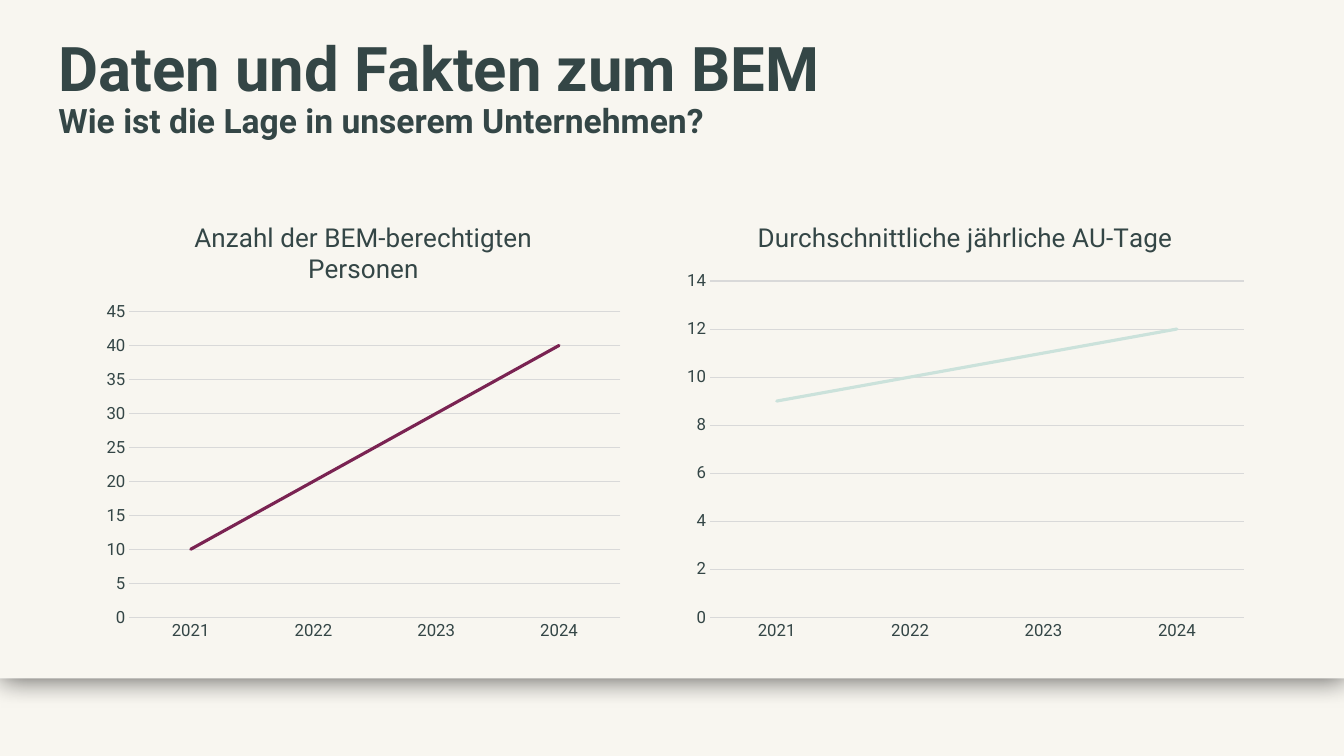
from lxml import etree
from pptx import Presentation
from pptx.chart.data import CategoryChartData
from pptx.dml.color import RGBColor
from pptx.enum import chart as ch, shapes, text
from pptx.oxml.ns import qn
from pptx.util import Inches, Pt

# Content
HEADING = "Daten und Fakten zum BEM"
QUESTION = "Wie ist die Lage in unserem Unternehmen?"
YEARS = ["2021", "2022", "2023", "2024"]
TRENDS = [
    dict(title="Durchschnittliche jährliche AU-Tage", values=[9, 10, 11, 12],
         color="mint", left=6.7, width=5.75),
    dict(title="Anzahl der BEM-berechtigten Personen", values=[10, 20, 30, 40],
         color="plum", left=0.95, width=5.31),
]
COLORS = {"paper": "F8F6F0", "ink": "344646", "grid": "D9D9D9",
          "mint": "CBE2DB", "plum": "7A2352", "shadow": "000000"}
FONT = "Roboto"
WIDTH, HEIGHT, PANEL_HEIGHT = 13.33, 7.5, 6.73
CHART_TOP, CHART_HEIGHT = 2, 4.45


def rgb(name):
    return RGBColor.from_string(COLORS[name])


def style(font, size, bold=False, color="ink"):
    font.name, font.size, font.bold = FONT, Pt(size), bold
    font.color.rgb = rgb(color)


def write(paragraph, words, **look):
    run = paragraph.add_run()
    run.text = words
    style(run.font, **look)


def stroke(line, color, width):
    line.color.rgb = rgb(color)
    line.width = Pt(width)


def add_panel(slide, top, height):
    panel = slide.shapes.add_shape(shapes.MSO_SHAPE.RECTANGLE, 0, Inches(top),
                                   Inches(WIDTH), Inches(height))
    panel.shadow.inherit = False
    panel.fill.solid()
    panel.fill.fore_color.rgb = rgb("paper")
    panel.line.fill.background()
    return panel


def add_shadow(panel, blur, distance, angle, opacity):
    effects = panel._element.spPr.find(qn("a:effectLst"))
    shadow = etree.SubElement(effects, qn("a:outerShdw"), blurRad=str(Pt(blur)),
                              dist=str(Pt(distance)), dir=str(angle * 60000),
                              algn="tl", rotWithShape="0")
    tint = etree.SubElement(shadow, qn("a:srgbClr"), val=COLORS["shadow"])
    etree.SubElement(tint, qn("a:alpha"), val=str(opacity * 1000))


def add_trend(slide, title, values, color, left, width):
    data = CategoryChartData()
    data.categories = YEARS
    data.add_series("Series 1", values)
    trend = slide.shapes.add_chart(
        ch.XL_CHART_TYPE.LINE, Inches(left), Inches(CHART_TOP),
        Inches(width), Inches(CHART_HEIGHT), data).chart
    style(trend.font, size=10)
    trend.has_legend = False
    trend.has_title = True
    write(trend.chart_title.text_frame.paragraphs[0], title, size=18.6)
    trend.chart_title.include_in_layout = False

    # Axes
    years, amounts = trend.category_axis, trend.value_axis
    for axis in (years, amounts):
        axis.major_tick_mark = axis.minor_tick_mark = ch.XL_TICK_MARK.NONE
        style(axis.tick_labels.font, size=12)
    stroke(years.format.line, "grid", 0.75)
    amounts.format.line.fill.background()
    amounts.has_major_gridlines = True
    stroke(amounts.major_gridlines.format.line, "grid", 0.75)

    # Line
    trend.plots[0].vary_by_categories = False
    series = trend.plots[0].series[0]
    series.smooth = False
    series.marker.style = ch.XL_MARKER_STYLE.NONE
    stroke(series.format.line, color, 2.25)
    series.format.line._get_or_add_ln().set("cap", "rnd")


deck = Presentation()
deck.slide_width, deck.slide_height = Inches(WIDTH), Inches(HEIGHT)
slide = deck.slides.add_slide(deck.slide_layouts[6])

# Background: footer strip below a raised panel
add_panel(slide, PANEL_HEIGHT, HEIGHT - PANEL_HEIGHT)
add_shadow(add_panel(slide, 0, PANEL_HEIGHT),
           blur=19.5, distance=2, angle=45, opacity=60)

# Heading
heading = slide.shapes.add_textbox(Inches(0.58), Inches(0.31),
                                   Inches(11), Inches(1.16)).text_frame
heading.word_wrap = True
heading.vertical_anchor = text.MSO_ANCHOR.MIDDLE
heading.margin_left = heading.margin_right = 0
heading.margin_top = heading.margin_bottom = 0
lines = heading.paragraphs[0]
lines.line_spacing = 0.9
write(lines, HEADING, size=44, bold=True)
lines.add_line_break()
write(lines, QUESTION, size=24, bold=True)

# Charts
for trend in TRENDS:
    add_trend(slide, **trend)

deck.save("out.pptx")
